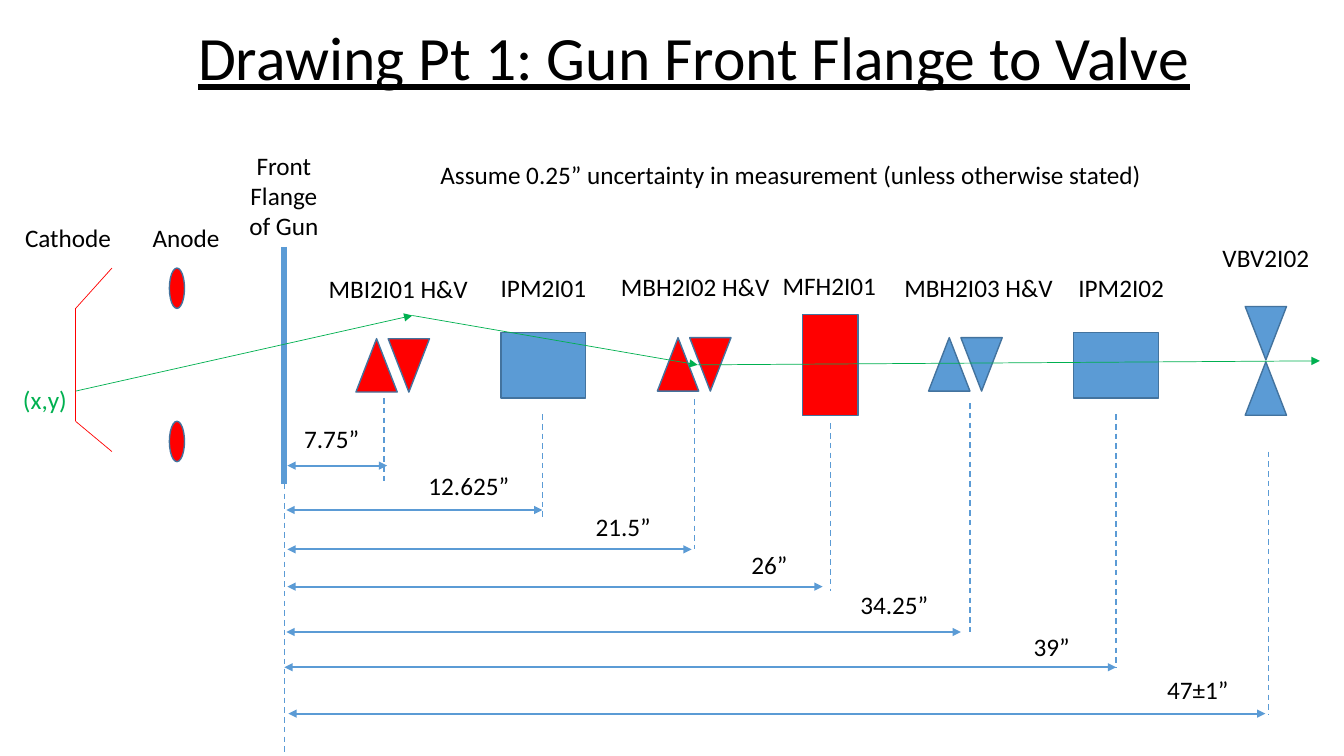
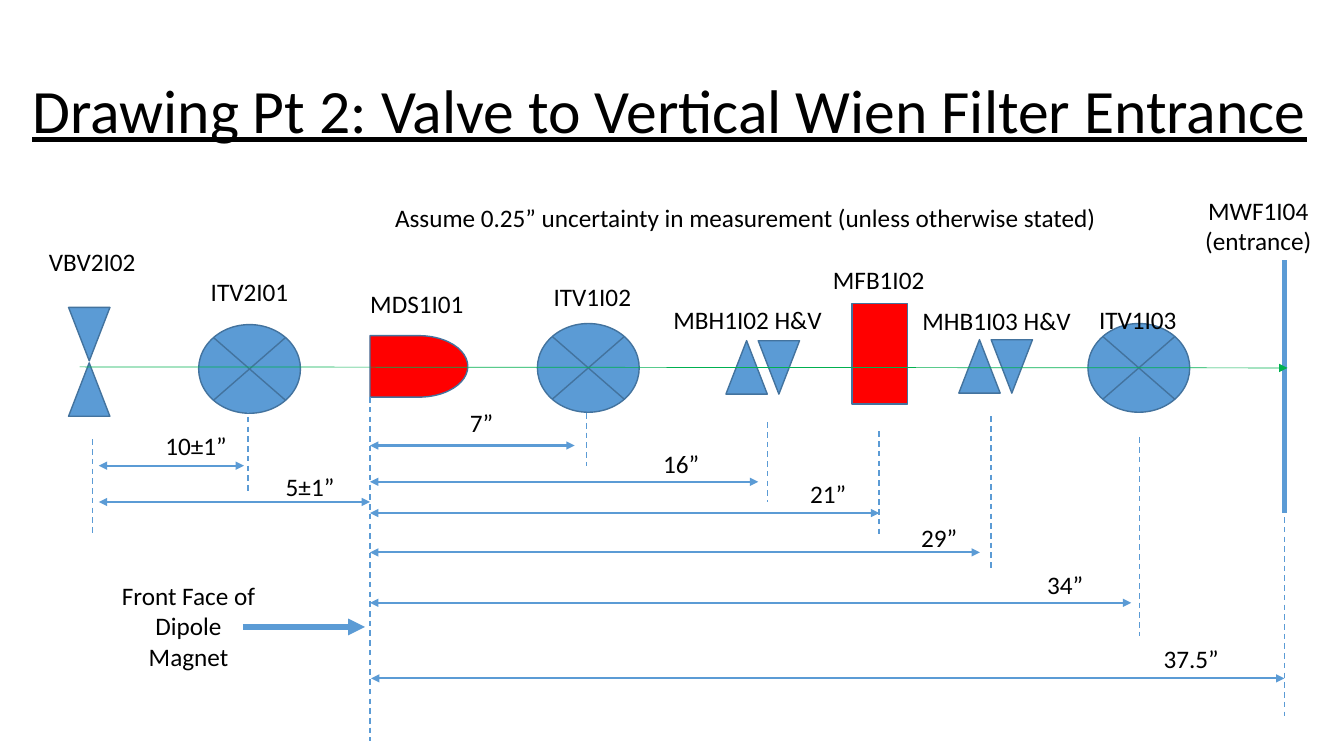
import pptx
import pptx.util
import pptx.dml.color
import pptx.enum.dml
import pptx.enum.shapes
import pptx.enum.text
import pptx.oxml

PX = 9144  # EMU per px, 100 px to the inch
BLUE = pptx.dml.color.RGBColor(0x5B, 0x9B, 0xD5)
EDGE = pptx.dml.color.RGBColor(0x43, 0x73, 0x9E)
RED = pptx.dml.color.RGBColor(0xFF, 0x00, 0x00)
GREEN = pptx.dml.color.RGBColor(0x00, 0xB0, 0x50)
BLACK = pptx.dml.color.RGBColor(0x00, 0x00, 0x00)
FONT = "Calibri"
NOTE = "Assume 0.25” uncertainty in measurement (unless otherwise stated)"

SHAPE = pptx.enum.shapes.MSO_SHAPE
ALIGN = pptx.enum.text.PP_ALIGN


def px(*lengths):
    return [n * PX for n in lengths]


def write(tf, text, size=18, color=BLACK, align=ALIGN.CENTER, underline=None):
    p = tf.paragraphs[0]
    p.alignment = align
    r = p.add_run()
    r.text = text
    r.font.name = FONT
    r.font.size = pptx.util.Pt(size)
    r.font.color.rgb = color
    r.font.underline = underline
    return p


def add_slide(prs, title, box, align):
    """Add a slide whose title placeholder fills box."""
    s = prs.slides.add_slide(prs.slide_layouts[5])
    sp = s.shapes.title
    sp.left, sp.top, sp.width, sp.height = px(*box)
    tf = sp.text_frame
    tf.vertical_anchor = pptx.enum.text.MSO_ANCHOR.MIDDLE
    p = write(tf, title, size=44, align=align, underline=True)
    p.line_spacing = 0.9
    return s


def add_label(s, text, x, y, w, h=40, wrap=True, **style):
    tf = s.shapes.add_textbox(*px(x, y, w, h)).text_frame
    tf.word_wrap = wrap
    tf.auto_size = pptx.enum.text.MSO_AUTO_SIZE.SHAPE_TO_FIT_TEXT
    write(tf, text, **style)


def add_part(s, kind, x, y, w, h, fill=BLUE, rotation=0):
    sp = s.shapes.add_shape(kind, *px(x, y, w, h))
    sp.shadow.inherit = False
    sp.fill.solid()
    sp.fill.fore_color.rgb = fill
    sp.line.color.rgb = EDGE
    sp.line.width = pptx.util.Pt(1)
    sp.rotation = rotation


def add_line(s, x1, y1, x2, y2, color=BLUE, width=1, dash=False, arrows=()):
    """Draw a line; arrows lists the ends, headEnd and tailEnd, that get a tip."""
    straight = pptx.enum.shapes.MSO_CONNECTOR.STRAIGHT
    c = s.shapes.add_connector(straight, *px(x1, y1, x2, y2))
    c.line.color.rgb = color
    c.line.width = pptx.util.Pt(width)
    if dash:
        c.line.dash_style = pptx.enum.dml.MSO_LINE.DASH
    ns = pptx.oxml.ns.nsdecls("a")
    ln = c.line._get_or_add_ln()
    for end in arrows:
        ln.append(pptx.oxml.parse_xml(f'<a:{end} {ns} type="triangle"/>'))
    c._element.spPr.append(pptx.oxml.parse_xml(f"<a:effectLst {ns}/>"))


def add_triangle(s, x, y, fill=BLUE, rotation=0):
    add_part(s, SHAPE.ISOSCELES_TRIANGLE, x, y, 41, 53, fill, rotation)


def add_steerer(s, x, y, fill=BLUE):
    """Upright and inverted triangle side by side."""
    add_triangle(s, x, y, fill)
    add_triangle(s, x + 32, y, fill, rotation=180)


def add_valve(s, x, y):
    """Two triangles meeting tip to tip."""
    add_triangle(s, x, y, rotation=180)
    add_triangle(s, x, y + 55)


def add_screen(s, x, y):
    add_part(s, SHAPE.FLOWCHART_SUMMING_JUNCTION, x, y, 101, 88)


def add_lens(s, x, y):
    add_part(s, SHAPE.RECTANGLE, x, y, 55, 100, RED)


def add_guides(s, guides):
    """Draw dashed verticals given as (x, top, bottom)."""
    for x, top, bottom in guides:
        add_line(s, x, top, x, bottom, dash=True)


def add_distances(s, distances, label_width):
    """Draw double arrows given as (text, from, to, y, label left, label top)."""
    for text, x1, x2, y, left, top in distances:
        add_line(s, x1, y, x2, y, width=1.5, arrows=("headEnd", "tailEnd"))
        add_label(s, text, left, top, label_width)


def add_beam(s, *points):
    for start, end in zip(points, points[1:]):
        add_line(s, *start, *end, color=GREEN, width=0.5, arrows=("tailEnd",))


def build_gun_to_valve(prs):
    s = add_slide(prs, "Drawing Pt 1: Gun Front Flange to Valve",
                  (135, 5, 1107, 111), ALIGN.CENTER)
    for y in (266, 418):
        add_part(s, SHAPE.OVAL, 168, y, 15, 40, RED)
    cathode = [(111, 266), (75, 306), (75, 418), (111, 448)]
    for start, end in zip(cathode, cathode[1:]):
        add_line(s, *start, *end, color=RED, width=0.5)
    add_line(s, 282, 245, 282, 480, width=4)

    add_steerer(s, 353, 336, RED)
    add_steerer(s, 652, 335, RED)
    add_steerer(s, 921, 335)
    for x in (497, 1065):
        add_part(s, SHAPE.RECTANGLE, x, 330, 84, 65)
    add_lens(s, 796, 312)

    add_label(s, "Cathode", 15, 216, 127, align=ALIGN.LEFT)
    add_label(s, "Front Flange of Gun", 234, 144, 95, 101)
    for text, x, y, w in [("Anode", 137, 216, 95),
                          ("MBI2I01 H&V", 311, 266, 168),
                          ("IPM2I01", 483, 265, 112),
                          ("MBH2I02 H&V", 595, 264, 189),
                          ("MFH2I01", 763, 263, 119),
                          ("MBH2I03 H&V", 880, 265, 181),
                          ("IPM2I02", 1058, 265, 108),
                          ("VBV2I02", 1202, 236, 107)]:
        add_label(s, text, x, y, w)
    add_label(s, NOTE, 427, 153, 740, align=ALIGN.LEFT)

    add_guides(s, [(282, 480, 750), (381, 395, 480), (538, 411, 515),
                   (689, 396, 545), (824, 420, 586), (962, 400, 627),
                   (1107, 411, 662), (1258, 448, 709)])
    add_distances(s, [("7.75”", 285, 384, 462, 273, 415),
                      ("12.625”", 284, 538, 506, 409, 462),
                      ("21.5”", 285, 686, 545, 562, 502),
                      ("26”", 285, 816, 582, 707, 540),
                      ("34.25”", 284, 953, 627, 831, 580),
                      ("39”", 282, 1107, 662, 987, 621),
                      ("47±1”", 286, 1255, 708, 1132, 664)], 112)

    add_valve(s, 1235, 304)
    add_beam(s, (75, 388), (409, 313), (692, 362), (1309, 358))
    add_label(s, "(x,y)", 13, 376, 64, wrap=False, color=GREEN, align=ALIGN.LEFT)


def build_valve_to_filter(prs):
    s = add_slide(prs, "Drawing Pt 2: Valve to Vertical Wien Filter Entrance",
                  (22, 40, 1294, 145), ALIGN.LEFT)
    for x, y in [(197, 322), (533, 321), (1079, 321)]:
        add_screen(s, x, y)
    add_part(s, SHAPE.FLOWCHART_DELAY, 367, 333, 97, 61, RED)
    add_steerer(s, 951, 337)
    add_steerer(s, 720, 338)
    add_lens(s, 845, 301)
    add_valve(s, 68, 305)
    add_line(s, 1274, 258, 1274, 509, width=4)

    add_guides(s, [(92, 436, 531), (246, 404, 489), (367, 394, 735),
                   (582, 410, 462), (761, 419, 498), (872, 428, 531),
                   (983, 413, 565), (1130, 434, 631), (1274, 513, 710)])
    add_distances(s, [("10±1”", 98, 242, 462, 144, 422),
                      ("5±1”", 98, 367, 498, 257, 463),
                      ("7”", 367, 570, 442, 427, 399),
                      ("16”", 367, 752, 478, 625, 440),
                      ("21”", 367, 872, 509, 771, 470),
                      ("29”", 367, 972, 548, 881, 513),
                      ("34”", 367, 1122, 598, 1006, 560),
                      ("37.5”", 368, 1274, 673, 1131, 633)], 101)

    for text, x, y, w in [("VBV2I02", 26, 239, 131),
                          ("ITV2I01", 182, 269, 131),
                          ("MDS1I01", 348, 281, 131),
                          ("ITV1I02", 522, 274, 131),
                          ("MBH1I02 H&V", 636, 297, 211),
                          ("MFB1I02", 766, 257, 211),
                          ("MHB1I03 H&V", 883, 298, 211),
                          ("ITV1I03", 1023, 297, 211)]:
        add_label(s, text, x, y, w)
    add_label(s, "MWF1I04 (entrance)", 1163, 189, 170, 71)
    add_label(s, "Front Face of Dipole Magnet", 108, 571, 158, 101)
    add_line(s, 241, 622, 362, 622, width=4, arrows=("tailEnd",))
    add_label(s, NOTE, 382, 196, 740, align=ALIGN.LEFT)
    add_beam(s, (79, 364), (1277, 365))


def main():
    prs = pptx.Presentation()
    prs.slide_width, prs.slide_height = px(1333, 750)
    build_gun_to_valve(prs)
    build_valve_to_filter(prs)
    prs.save("out.pptx")


if __name__ == "__main__":
    main()
